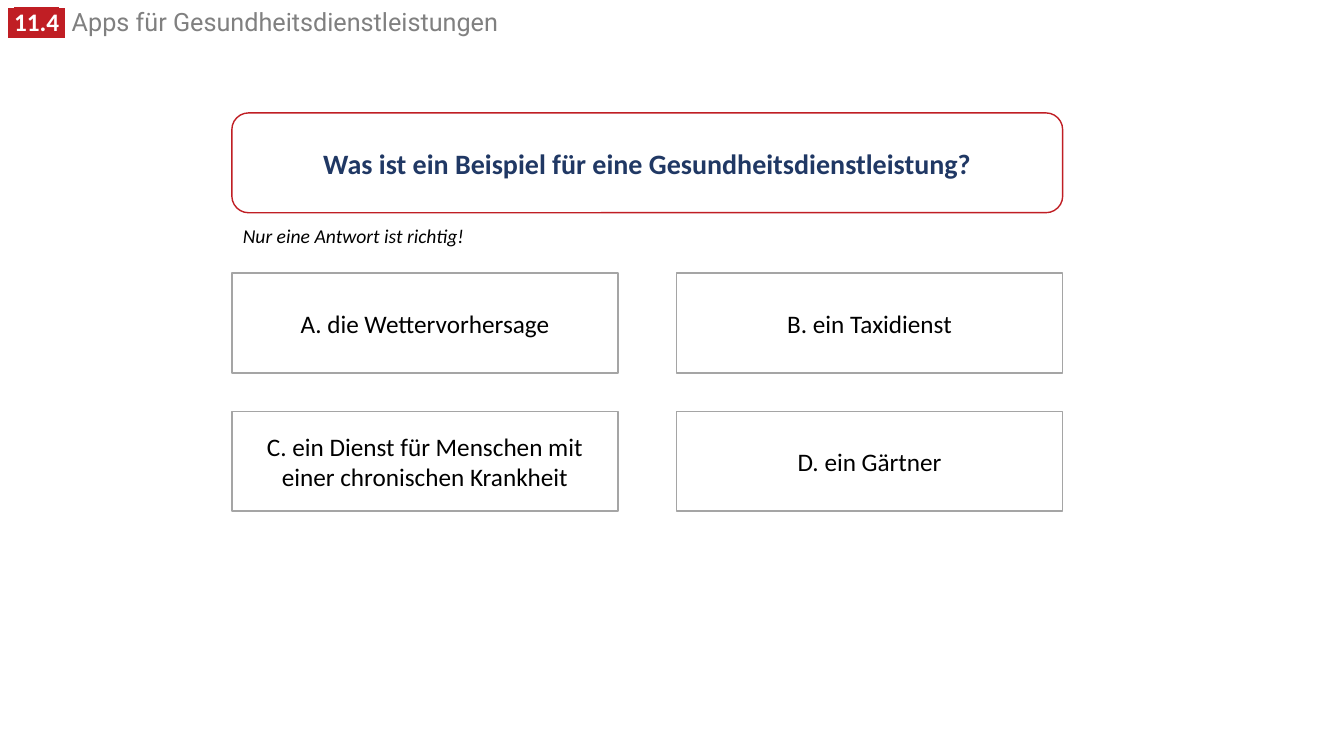
"""Builds a quiz slide with one question and four answer boxes."""
from lxml.etree import SubElement
from pptx import Presentation
from pptx.dml.color import RGBColor
from pptx.enum.shapes import MSO_SHAPE
from pptx.enum.text import MSO_ANCHOR, PP_ALIGN
from pptx.oxml.ns import qn
from pptx.util import Inches, Pt

RED = "C01E24"
WHITE = "FFFFFF"


def add_run(paragraph, text, color, **formats):
    run = paragraph.add_run()
    run.text = text
    for name, value in formats.items():
        setattr(run.font, name, value)
    run.font.color.rgb = RGBColor.from_string(color)
    return run


def add_box(kind, left, top, width, line_color, text, text_color, **formats):
    shape = slide.shapes.add_shape(kind, Inches(left), Inches(top), Inches(width), Inches(0.99))
    shape.shadow.inherit = False
    shape.fill.solid()
    shape.fill.fore_color.rgb = RGBColor.from_string(WHITE)
    shape.line.color.rgb = RGBColor.from_string(line_color)
    shape.line.width = Pt(1)
    shape.text_frame.word_wrap = True
    shape.text_frame.vertical_anchor = MSO_ANCHOR.MIDDLE
    paragraph = shape.text_frame.paragraphs[0]
    paragraph.alignment = PP_ALIGN.CENTER
    add_run(paragraph, text, text_color, name="Calibri", **formats)


presentation = Presentation()
presentation.slide_width = Inches(13.33)
presentation.slide_height = Inches(7.5)
slide = presentation.slides.add_slide(presentation.slide_layouts[6])

header = slide.shapes.add_textbox(Inches(-0.02), Inches(0.07), Inches(9.52), Inches(0.35))
header.text_frame.word_wrap = True
header_paragraph = header.text_frame.paragraphs[0]
header_paragraph.line_spacing = 0.8
for text, font_name in [(" ", "Roboto"), ("11.4", "Calibri"), (" ", "Roboto")]:
    run = add_run(header_paragraph, text, WHITE, name=font_name, size=Pt(18), bold=True)
    properties = run.font.fill._xPr
    highlight = SubElement(properties, qn("a:highlight"))
    SubElement(highlight, qn("a:srgbClr"), val=RED)
    properties.find(qn("a:solidFill")).addnext(highlight)
add_run(header_paragraph, " Apps für Gesundheitsdienstleistungen", "808080",
        name="Roboto", size=Pt(18), bold=False)

add_box(MSO_SHAPE.ROUNDED_RECTANGLE, 2.3, 1.12, 8.24, RED,
        "Was ist ein Beispiel für eine Gesundheitsdienstleistung?", "203864",
        size=Pt(20), bold=True)

hint = slide.shapes.add_textbox(Inches(2.31), Inches(2.17), Inches(2.42), Inches(0.34))
hint.text_frame.word_wrap = False
add_run(hint.text_frame.paragraphs[0], "Nur eine Antwort ist richtig!", "000000",
        name="Calibri", size=Pt(14), italic=True)

answers = [
    "A. die Wettervorhersage",
    "B. ein Taxidienst",
    "C. ein Dienst für Menschen mit einer chronischen Krankheit",
    "D. ein Gärtner",
]
for index, answer in enumerate(answers):
    row, column = divmod(index, 2)
    add_box(MSO_SHAPE.RECTANGLE, 2.3 + 4.41 * column, 2.71 + 1.37 * row, 3.83, "A5A5A5",
            answer, "000000", size=Pt(18))

presentation.save("out.pptx")
